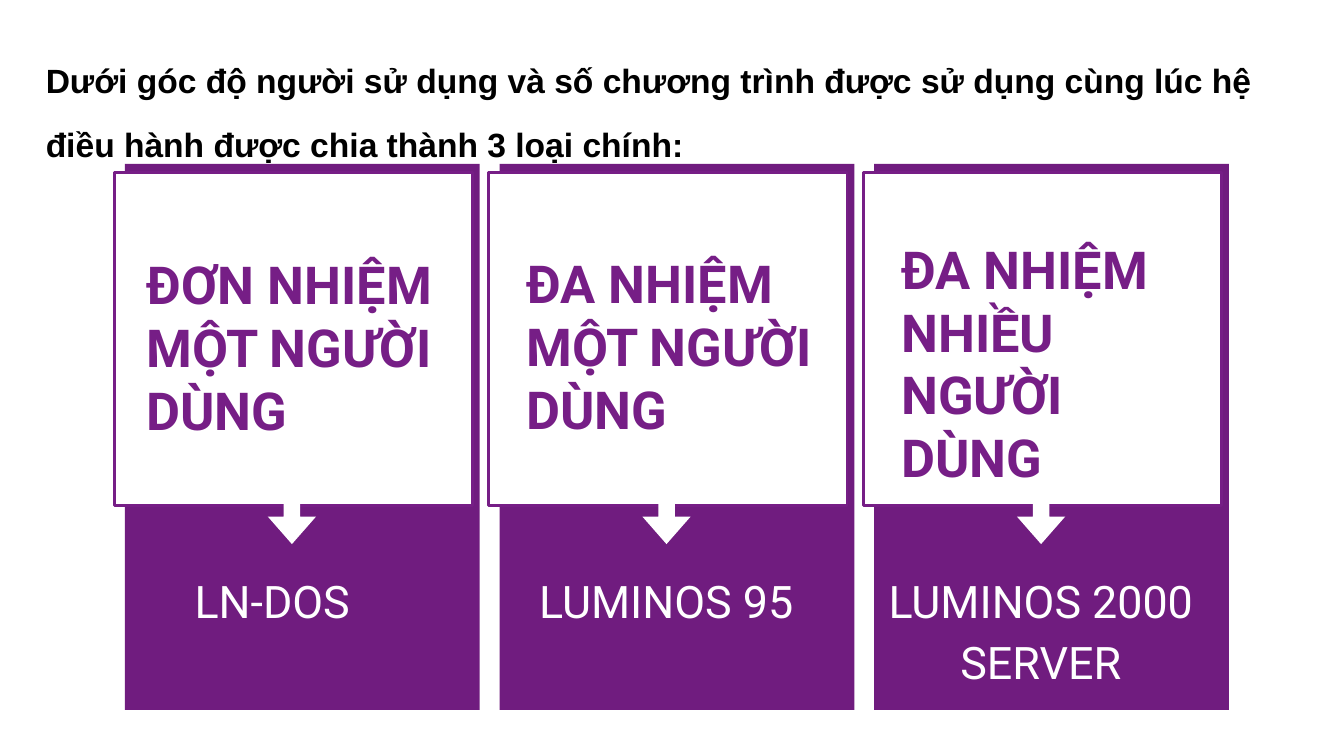
import pptx
import pptx.dml.color
import pptx.enum.shapes
import pptx.enum.text
import pptx.util

PURPLE = pptx.dml.color.RGBColor(0x70, 0x1C, 0x7F)
VIOLET = pptx.dml.color.RGBColor(0x76, 0x1E, 0x86)
WHITE = pptx.dml.color.RGBColor(0xFF, 0xFF, 0xFF)
BLACK = pptx.dml.color.RGBColor(0x00, 0x00, 0x00)

SHAPE = pptx.enum.shapes.MSO_SHAPE
CENTER = pptx.enum.text.PP_ALIGN.CENTER
WIDTH = pptx.util.Inches(10)
HEIGHT = WIDTH * 9 // 16
PITCH = 27.87


class Deck:
    """Draws styled elements on a slide, with lengths in percent of its size."""

    def __init__(self):
        self.prs = pptx.Presentation()
        self.prs.slide_width, self.prs.slide_height = WIDTH, HEIGHT
        self.s = self.prs.slides.add_slide(self.prs.slide_layouts[6])

    def frame(self, x, y, w, h):
        return [int(share * size / 100)
                for share, size in zip((x, y, w, h), (WIDTH, HEIGHT) * 2)]

    def shape(self, kind, box, fill, line=None):
        sp = self.s.shapes.add_shape(kind, *self.frame(*box))
        sp.shadow.inherit = False
        sp.fill.solid()
        sp.fill.fore_color.rgb = fill
        if line is None:
            sp.line.fill.background()
        else:
            sp.line.color.rgb = line
            sp.line.width = pptx.util.Pt(1.5)
        return sp

    def arrow(self, box):
        sp = self.shape(SHAPE.RIGHT_ARROW, box, WHITE)
        sp.rotation = 90
        sp.adjustments[0], sp.adjustments[1] = 0.34, 0.57

    def text(self, box, text, size, color, font="Roboto", bold=False,
             align=None, spacing=None, before=None, indent=None):
        tf = self.s.shapes.add_textbox(*self.frame(*box)).text_frame
        tf.word_wrap = True
        tf.margin_left = tf.margin_right = pptx.util.Inches(0.1)
        tf.margin_top = tf.margin_bottom = pptx.util.Inches(0.1)
        p = tf.paragraphs[0]
        p.text = text
        p.font.size, p.font.name = pptx.util.Pt(size), font
        p.font.bold, p.font.color.rgb = bold, color
        p.alignment, p.line_spacing = align, spacing
        if before:
            p.space_before = pptx.util.Pt(before)
        if indent:
            pPr = p._p.get_or_add_pPr()
            pPr.set("marL", str(pptx.util.Inches(indent)))
            pPr.set("indent", "0")

    def card(self, column, heading, heading_x, heading_y, example, **style):
        x = 8.5 + column * PITCH
        self.shape(SHAPE.RECTANGLE, (x + 0.8, 21.7, 26.4, 72.2), PURPLE)
        self.shape(SHAPE.RECTANGLE, (x, 22.8, 26.65, 44.1), WHITE, VIOLET)
        self.arrow((x + 11.27, 65.3, 3.9, 6.4))
        self.text((x + heading_x, heading_y, 23.6, 11.9), heading, 28, VIOLET, bold=True)
        self.text((x, 73, 26.4, 19.2), example, 24, WHITE, spacing=1.15, **style)


def main():
    deck = Deck()
    deck.text((2.42, 2.9, 95.1, 32.7),
              "Dưới góc độ người sử dụng và số chương trình được sử dụng cùng lúc hệ "
              "điều hành được chia thành 3 loại chính:",
              18, BLACK, font="Arial", bold=True, spacing=1.6, before=4)
    deck.card(0, "ĐƠN NHIỆM MỘT NGƯỜI DÙNG", 1.42, 31.6, "LN-DOS", indent=0.5)
    deck.card(1, "ĐA NHIỆM MỘT NGƯỜI DÙNG", 1.83, 31.5, "LUMINOS 95", align=CENTER)
    deck.card(2, "ĐA NHIỆM NHIỀU NGƯỜI DÙNG", 1.86, 29.6, "LUMINOS 2000 SERVER", align=CENTER)
    deck.prs.save("out.pptx")


if __name__ == "__main__":
    main()
